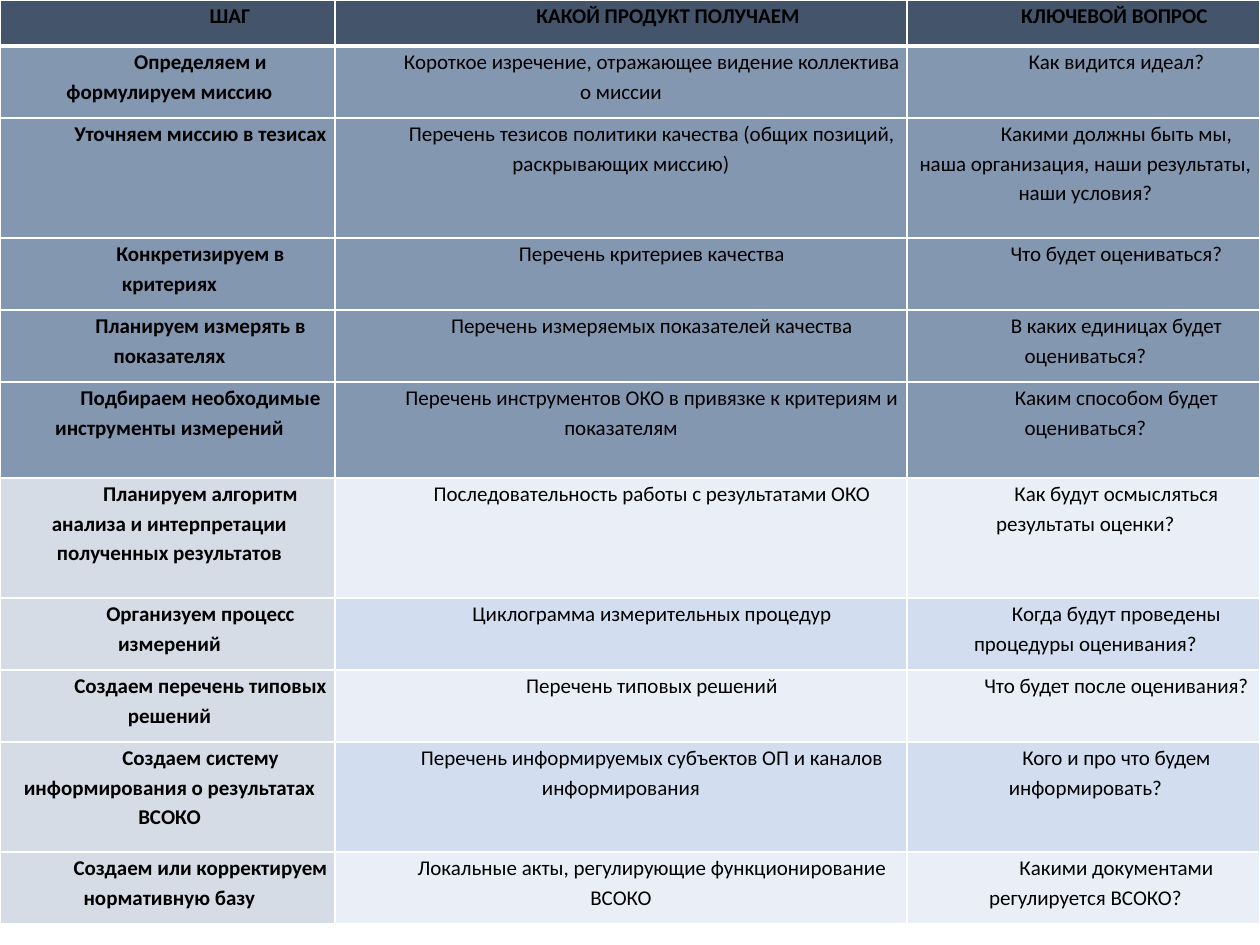
"""Builds the slide with the table of steps, products and key questions."""
from lxml import etree
from pptx import Presentation
from pptx.dml.color import RGBColor
from pptx.enum.text import PP_ALIGN
from pptx.oxml.ns import qn
from pptx.util import Pt

CENTER = PP_ALIGN.CENTER
PX = 914400 / 126
COLORS = {
    "header": "44546A",
    "dark": "8497B0",
    "step": "D6DCE5",
    "light": "EAEFF7",
    "band": "D2DEEF",
    "text": "000000",
    "border": "FFFFFF",
}
COLUMNS = [335, 572, 353]
HEIGHTS = [46, 72, 120, 72, 72, 96, 120, 72, 72, 110, 72]
HEADER_MARGINS = [63, 32, 0]
BODY_MARGINS = [4, 0, 4]
DARK_ROWS = 5
ROWS = [
    ("ШАГ", "КАКОЙ ПРОДУКТ ПОЛУЧАЕМ", "КЛЮЧЕВОЙ ВОПРОС"),
    ("Определяем и формулируем миссию",
     "Короткое изречение, отражающее видение коллектива о миссии",
     "Как видится идеал?"),
    ("Уточняем миссию в тезисах",
     "Перечень тезисов политики качества (общих позиций, раскрывающих миссию)",
     "Какими должны быть мы, наша организация, наши результаты, наши условия?"),
    ("Конкретизируем в критериях",
     "Перечень критериев качества",
     "Что будет оцениваться?"),
    ("Планируем измерять в показателях",
     "Перечень измеряемых показателей качества",
     "В каких единицах будет оцениваться?"),
    ("Подбираем необходимые инструменты измерений",
     "Перечень инструментов ОКО в привязке к критериям и показателям",
     "Каким способом будет оцениваться?"),
    ("Планируем алгоритм анализа и интерпретации полученных результатов",
     "Последовательность работы с результатами ОКО",
     "Как будут осмысляться результаты оценки?"),
    ("Организуем процесс измерений",
     "Циклограмма измерительных процедур",
     "Когда будут проведены процедуры оценивания?"),
    ("Создаем перечень типовых решений",
     "Перечень типовых решений",
     "Что будет после оценивания?"),
    ("Создаем систему информирования о результатах ВСОКО",
     "Перечень информируемых субъектов ОП и каналов информирования",
     "Кого и про что будем информировать?"),
    ("Создаем или корректируем нормативную базу",
     "Локальные акты, регулирующие функционирование ВСОКО",
     "Какими документами регулируется ВСОКО?"),
]


def px(n):
    return round(n * PX)


def fill_name(row, col):
    if row == 0:
        return "header"
    if row <= DARK_ROWS:
        return "dark"
    if col == 0:
        return "step"
    return "band" if row % 2 else "light"


class Deck:
    def __init__(self, prs, font="Calibri", size=12):
        self.font, self.size = font, size
        self.s = prs.slides.add_slide(prs.slide_layouts[6])

    def table(self, x, y, columns, heights):
        frame = self.s.shapes.add_table(len(heights), len(columns), px(x), px(y),
                                        px(sum(columns)), px(sum(heights)))
        tbl = frame.table
        tbl.horz_banding = False
        for column, width in zip(tbl.columns, columns):
            column.width = px(width)
        for row, height in zip(tbl.rows, heights):
            row.height = px(height)
        return tbl

    def borders(self, cell, top, bottom):
        tcPr = cell._tc.get_or_add_tcPr()
        for side, width in (("L", 1), ("R", 1), ("T", top), ("B", bottom)):
            ln = etree.SubElement(tcPr, qn(f"a:ln{side}"), w=str(Pt(width)))
            fill = etree.SubElement(ln, qn("a:solidFill"))
            etree.SubElement(fill, qn("a:srgbClr"), val=COLORS["border"])

    def cell(self, cell, text, fill, margin, bold, top=1, bottom=1):
        self.borders(cell, top, bottom)
        cell.fill.solid()
        cell.fill.fore_color.rgb = RGBColor.from_string(COLORS[fill])
        cell.margin_left = cell.margin_right = px(5)
        cell.margin_top = cell.margin_bottom = 0
        tf = cell.text_frame
        tf.text = text
        p = tf.paragraphs[0]
        p.alignment = CENTER
        p.line_spacing = 1.15
        pPr = p._p.get_or_add_pPr()
        pPr.set("marL", str(px(margin)))
        pPr.set("indent", str(px(62)))
        r = p.runs[0]
        r.font.name, r.font.size, r.font.bold = self.font, Pt(self.size), bold
        r.font.color.rgb = RGBColor.from_string(COLORS["text"])


def main():
    prs = Presentation()
    prs.slide_width, prs.slide_height = px(1260), px(945)
    deck = Deck(prs)
    tbl = deck.table(0, 0, COLUMNS, HEIGHTS)
    for i, texts in enumerate(ROWS):
        margins = BODY_MARGINS if i else HEADER_MARGINS
        for j, text in enumerate(texts):
            deck.cell(tbl.cell(i, j), text, fill_name(i, j), margins[j],
                      bold=i == 0 or j == 0,
                      top=3 if i == 1 else 1, bottom=3 if i == 0 else 1)
    prs.save("out.pptx")


if __name__ == "__main__":
    main()
